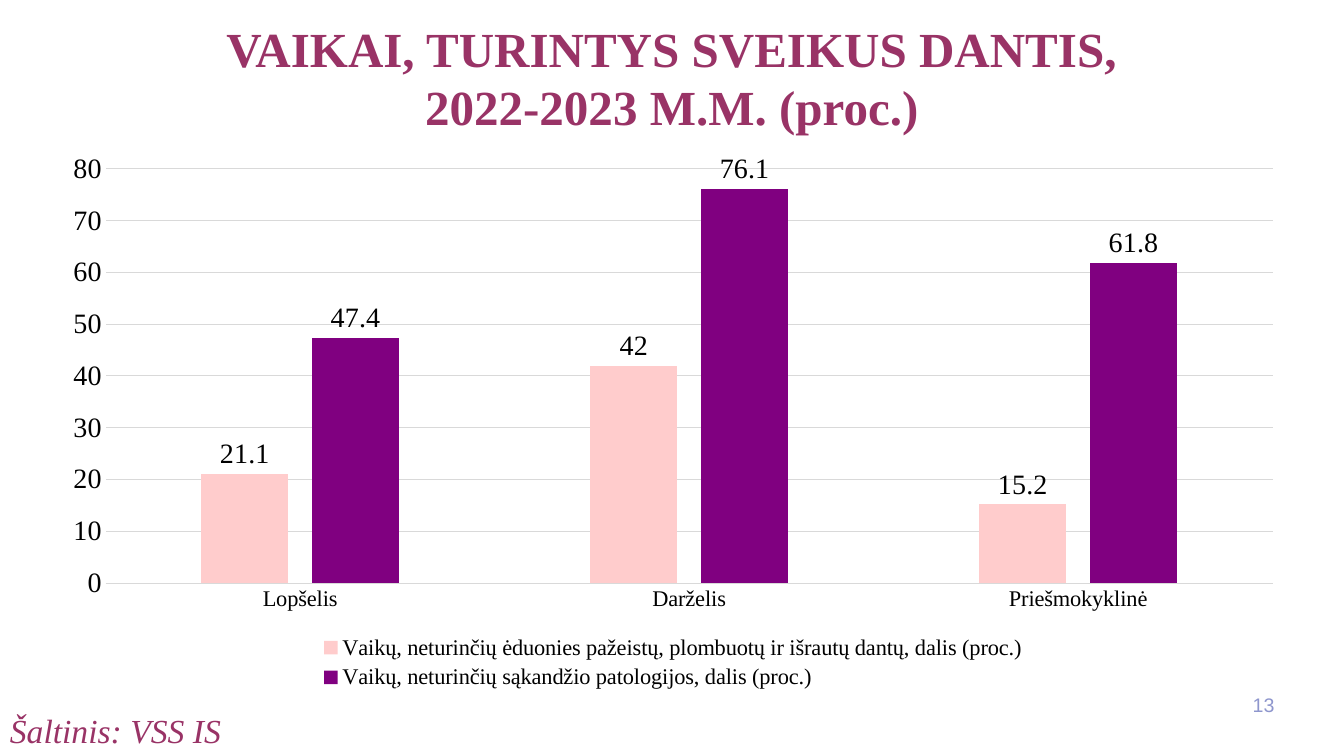
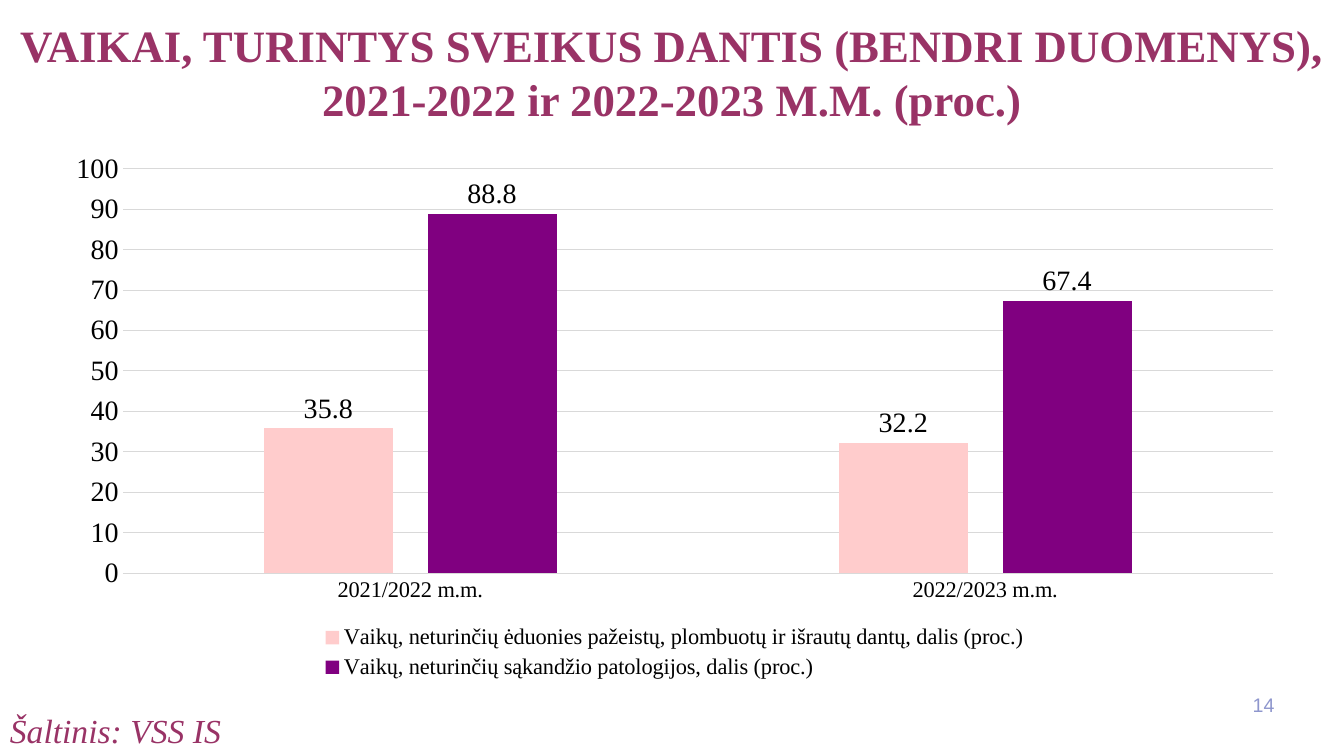
import pptx
import pptx.util
import pptx.dml.color
import pptx.chart.data
import pptx.enum.chart
import pptx.enum.text

PX = 9144
SERIF = "Times New Roman"
BERRY, BLACK, GRID, NUMBER = "993366", "000000", "D9D9D9", "8E96CD"
SOURCE = "Šaltinis: VSS IS"
SOURCE_BOX = (0, 699, 667, 50)
NUMBER_BOX = (1222, 679, 52, 40)
MEASURES = [
    ("Vaikų, neturinčių ėduonies pažeistų, plombuotų ir išrautų dantų, dalis (proc.)", "FFCCCC"),
    ("Vaikų, neturinčių sąkandžio patologijos, dalis (proc.)", "800080"),
]
SLIDES = [
    {
        "number": "13",
        "title": ["VAIKAI, TURINTYS SVEIKUS DANTIS,", "2022-2023 M.M. (proc.)"],
        "title_size": 35,
        "title_box": (211, 13, 911, 128),
        "chart_box": (48, 141, 1239, 548),
        "groups": ["Lopšelis", "Darželis", "Priešmokyklinė"],
        "values": [(21.1, 42, 15.2), (47.4, 76.1, 61.8)],
        "top": 80,
    },
    {
        "number": "14",
        "title": ["VAIKAI, TURINTYS SVEIKUS DANTIS (BENDRI DUOMENYS), "
                  "2021-2022 ir 2022-2023 M.M. (proc.)"],
        "title_size": 32,
        "title_box": (0, 13, 1333, 118),
        "chart_box": (51, 141, 1236, 538),
        "groups": ["2021/2022 m.m.", "2022/2023 m.m."],
        "values": [(35.8, 32.2), (88.8, 67.4)],
        "top": 100,
    },
]


def px(lengths):
    return [length * PX for length in lengths]


def rgb(code):
    return pptx.dml.color.RGBColor.from_string(code)


def set_font(font, size, color=BLACK, name=SERIF, bold=False, italic=False):
    font.name, font.size = name, pptx.util.Pt(size)
    font.bold, font.italic = bold, italic
    font.color.rgb = rgb(color)


def write(frame, lines, align, **font):
    frame.word_wrap = True
    frame.auto_size = pptx.enum.text.MSO_AUTO_SIZE.NONE
    frame.vertical_anchor = pptx.enum.text.MSO_ANCHOR.TOP
    frame.text = "\n".join(lines)
    for paragraph in frame.paragraphs:
        paragraph.alignment = align
        set_font(paragraph.font, **font)


def add_title(slide, content):
    title = slide.shapes.title
    title.left, title.top, title.width, title.height = px(content["title_box"])
    write(title.text_frame, content["title"], pptx.enum.text.PP_ALIGN.CENTER,
          size=content["title_size"], color=BERRY, bold=True)


def add_footer(slide, number):
    source = slide.shapes.add_textbox(*px(SOURCE_BOX))
    write(source.text_frame, [SOURCE], pptx.enum.text.PP_ALIGN.LEFT,
          size=24, color=BERRY, italic=True)
    page = slide.shapes.add_textbox(*px(NUMBER_BOX))
    write(page.text_frame, [number], pptx.enum.text.PP_ALIGN.RIGHT,
          size=14, color=NUMBER, name="Arial")
    page.text_frame.vertical_anchor = pptx.enum.text.MSO_ANCHOR.MIDDLE


def style_line(line):
    line.color.rgb = rgb(GRID)
    line.width = pptx.util.Pt(0.75)


def add_teeth_chart(slide, content):
    kinds = pptx.enum.chart
    data = pptx.chart.data.CategoryChartData()
    data.categories = content["groups"]
    for (name, _), values in zip(MEASURES, content["values"]):
        data.add_series(name, values)
    chart = slide.shapes.add_chart(
        kinds.XL_CHART_TYPE.COLUMN_CLUSTERED, *px(content["chart_box"]), data).chart
    set_font(chart.font, 10, name="Calibri")
    chart.has_title = False
    chart.has_legend = True
    chart.legend.position = kinds.XL_LEGEND_POSITION.BOTTOM
    chart.legend.include_in_layout = False
    set_font(chart.legend.font, 16)

    groups, percent = chart.category_axis, chart.value_axis
    for axis, size in ((groups, 16), (percent, 20)):
        axis.major_tick_mark = axis.minor_tick_mark = kinds.XL_TICK_MARK.NONE
        set_font(axis.tick_labels.font, size)
    style_line(groups.format.line)
    percent.format.line.fill.background()
    percent.minimum_scale, percent.maximum_scale = 0, content["top"]
    percent.major_unit = 10
    style_line(percent.major_gridlines.format.line)

    plot = chart.plots[0]
    plot.gap_width, plot.overlap = 219, -27
    plot.vary_by_categories = False
    for series, (_, color) in zip(plot.series, MEASURES):
        series.format.fill.solid()
        series.format.fill.fore_color.rgb = rgb(color)
        series.invert_if_negative = False
        labels = series.data_labels
        labels.show_value = True
        labels.position = kinds.XL_LABEL_POSITION.OUTSIDE_END
        set_font(labels.font, 20)


def main():
    deck = pptx.Presentation()
    deck.slide_width, deck.slide_height = px((1333, 750))
    for content in SLIDES:
        slide = deck.slides.add_slide(deck.slide_layouts[5])
        add_teeth_chart(slide, content)
        add_title(slide, content)
        add_footer(slide, content["number"])
    deck.save("out.pptx")


if __name__ == "__main__":
    main()
